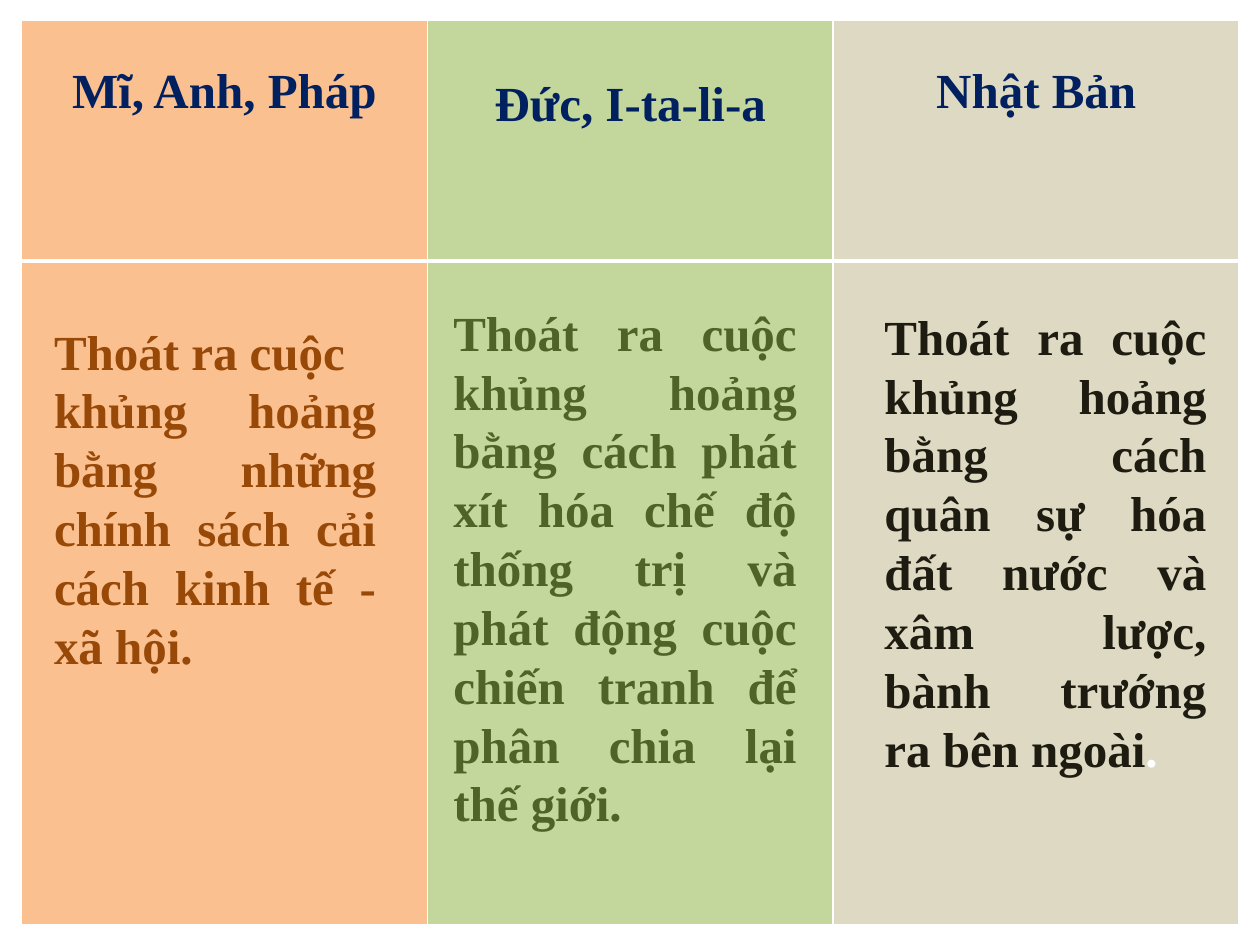
from pptx import Presentation
from pptx.dml.color import RGBColor
from pptx.enum.text import MSO_AUTO_SIZE, PP_ALIGN
from pptx.oxml.ns import qn
from pptx.util import Cm, Pt
from lxml import etree

CENTER, JUSTIFY = PP_ALIGN.CENTER, PP_ALIGN.JUSTIFY
FIT_SHAPE = MSO_AUTO_SIZE.SHAPE_TO_FIT_TEXT

WHITE = RGBColor(0xFF, 0xFF, 0xFF)
NAVY = RGBColor(0x00, 0x20, 0x60)
ORANGE = RGBColor(0xFA, 0xC0, 0x90)
GREEN = RGBColor(0xC3, 0xD6, 0x9B)
TAN = RGBColor(0xDD, 0xD9, 0xC3)
BROWN = RGBColor(0x98, 0x48, 0x07)
OLIVE = RGBColor(0x4F, 0x62, 0x28)
BLACK = RGBColor(0x1E, 0x1C, 0x11)

# Country group, top margin of the heading (cm), column fill
COLUMNS = [
    ("Mĩ, Anh, Pháp", 0.89, ORANGE),
    ("Đức, I-ta-li-a", 1.15, GREEN),
    ("Nhật Bản", 0.89, TAN),
]

# Left, top, width, height (cm), text colour, paragraphs
SOLUTIONS = [
    (0.84, 6.35, 6.99, 7.44, BROWN, [
        "Thoát ra cuộc",
        "khủng hoảng bằng những chính sách cải cách kinh tế - xã hội."]),
    (8.89, 5.97, 7.42, 11.02, OLIVE, [
        "Thoát ra cuộc khủng hoảng bằng cách phát xít hóa chế độ thống trị "
        "và phát động cuộc chiến tranh để phân chia lại thế giới."]),
    (17.58, 6.05, 6.99, 9.83, BLACK, [
        "Thoát ra cuộc khủng hoảng bằng cách quân sự hóa đất nước và "
        "xâm lược, bành trướng ra bên ngoài"]),
]


class SlideBuilder:
    font_name = "Times New Roman"
    font_size = Pt(28)

    def __init__(self, slide):
        self.slide = slide

    def paragraph(self, paragraph, text, color, align):
        paragraph.text = text
        paragraph.alignment = align
        font = paragraph.font
        font.name, font.size, font.bold = self.font_name, self.font_size, True
        font.color.rgb = color

    def borders(self, cell, **widths):
        properties = cell._tc.get_or_add_tcPr()
        for side in "LRTB":
            line = etree.SubElement(properties, qn(f"a:ln{side}"),
                                    w=str(Pt(widths.get(side, 1))))
            fill = etree.SubElement(line, qn("a:solidFill"))
            etree.SubElement(fill, qn("a:srgbClr"), val=str(WHITE))

    def table(self, left, top, width, row_heights, columns):
        table = self.slide.shapes.add_table(
            len(row_heights), len(columns), Cm(left), Cm(top),
            Cm(width), Cm(sum(row_heights))).table
        table.first_row = table.horz_banding = False
        for row, height in zip(table.rows, row_heights):
            row.height = Cm(height)
        for index, (heading, margin, fill) in enumerate(columns):
            header, body = table.cell(0, index), table.cell(1, index)
            self.borders(header, B=3)
            self.borders(body, T=3)
            for cell in (header, body):
                cell.fill.solid()
                cell.fill.fore_color.rgb = fill
            header.margin_top = Cm(margin)
            self.paragraph(header.text_frame.paragraphs[0], heading, NAVY, CENTER)

    def text(self, left, top, width, height, color, paragraphs):
        frame = self.slide.shapes.add_textbox(
            Cm(left), Cm(top), Cm(width), Cm(height)).text_frame
        frame.word_wrap = True
        frame.auto_size = FIT_SHAPE
        for index, text in enumerate(paragraphs):
            paragraph = frame.add_paragraph() if index else frame.paragraphs[0]
            self.paragraph(paragraph, text, color, JUSTIFY)
        return frame


def main():
    presentation = Presentation()
    presentation.slide_width, presentation.slide_height = Cm(25.4), Cm(19.05)
    builder = SlideBuilder(
        presentation.slides.add_slide(presentation.slide_layouts[6]))

    # Coloured grid with the country groups
    builder.table(0.43, 0.41, 24.55, [4.85, 13.38], COLUMNS)

    # How each group left the crisis
    for solution in SOLUTIONS:
        japan = builder.text(*solution)

    # White full stop after the last text
    full_stop = japan.paragraphs[0].add_run()
    full_stop.text = "."
    full_stop.font.color.rgb = WHITE

    presentation.save("out.pptx")


if __name__ == "__main__":
    main()
